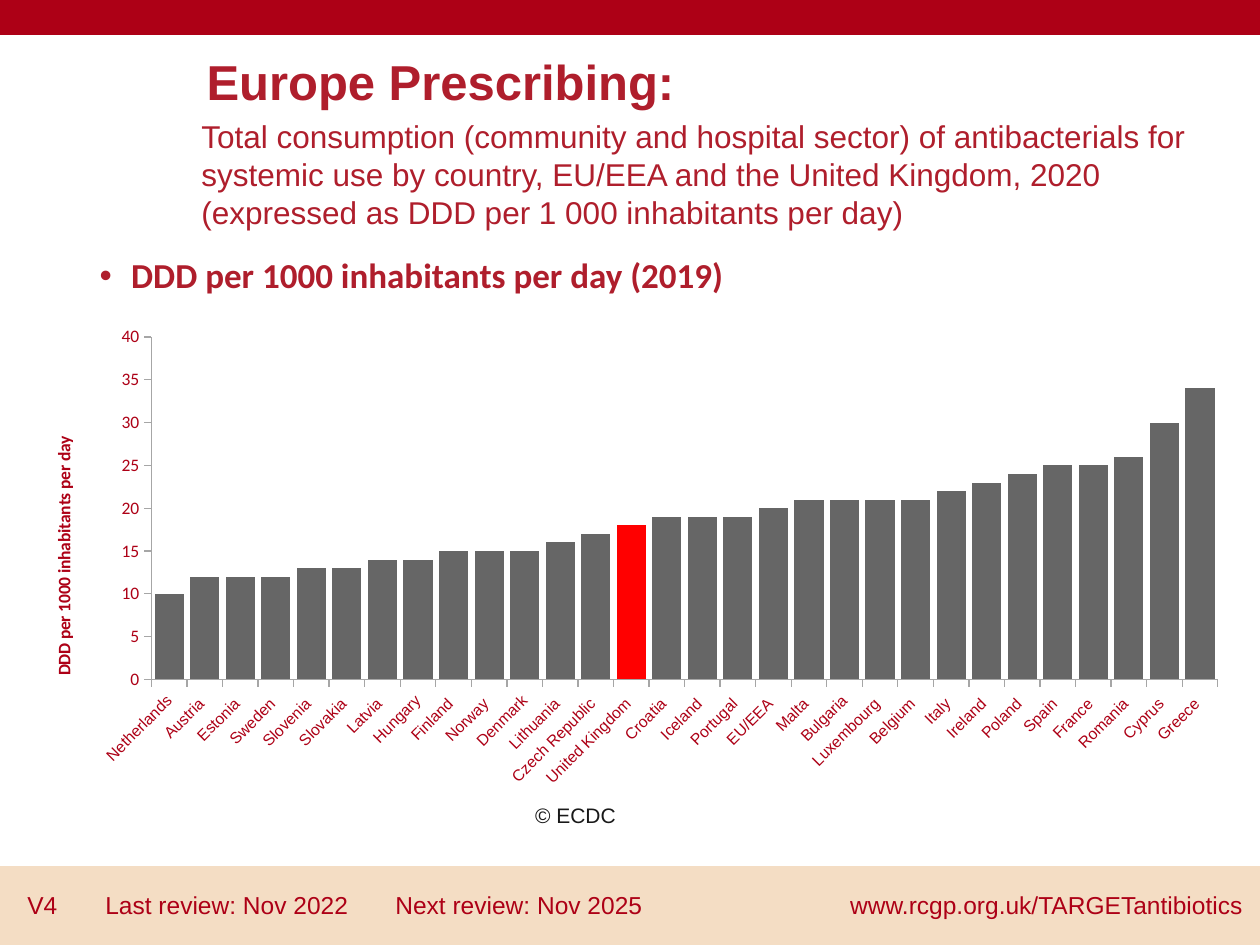
from lxml import etree
from pptx import Presentation
from pptx import util as u
from pptx.chart.data import CategoryChartData
from pptx.dml.color import RGBColor
from pptx.enum import chart as charts, shapes, text
from pptx.oxml import parse_xml
from pptx.oxml.ns import nsdecls, qn

RED, TITLE_RED, SAND, INK = "AD0016", "AF1E2C", "F4DDC4", "191919"
BAR_GREY, AXIS_GREY, HIGHLIGHT = "666666", "A6A6A6", "FF0000"
AXIS_TITLE = "DDD per 1000 inhabitants per day"
MARKED_COUNTRY = "United Kingdom "
CONSUMPTION = {
    "Netherlands": 10, "Austria ": 12, "Estonia ": 12, "Sweden ": 12,
    "Slovenia ": 13, "Slovakia ": 13, "Latvia ": 14, "Hungary": 14,
    "Finland ": 15, "Norway ": 15, "Denmark": 15, "Lithuania ": 16,
    "Czech Republic ": 17, MARKED_COUNTRY: 18, "Croatia ": 19,
    "Iceland ": 19, "Portugal ": 19, "EU/EEA ": 20, "Malta ": 21,
    "Bulgaria": 21, "Luxembourg ": 21, "Belgium ": 21, "Italy ": 22,
    "Ireland ": 23, "Poland ": 24, "Spain ": 25, "France ": 25,
    "Romania ": 26, "Cyprus ": 30, "Greece ": 34,
}


def px(length):
    return u.Emu(round(length * 914400 / 126))


def color(value):
    return RGBColor.from_string(value)


def style(font, size, hue, bold=False, name="Arial"):
    font.name, font.size, font.bold = name, u.Pt(size), bold
    font.color.rgb = color(hue)


def place(shape, box):
    shape.left, shape.top, shape.width, shape.height = map(px, box)


def add_band(page, box, hue):
    band = page.shapes.add_shape(shapes.MSO_SHAPE.RECTANGLE, *map(px, box))
    band.shadow.inherit = False
    band.fill.solid()
    band.fill.fore_color.rgb = color(hue)
    band.line.color.rgb = color(hue)
    band.line.width = u.Pt(1)


def add_label(page, box, words, size, hue, align=text.PP_ALIGN.LEFT,
              anchor=text.MSO_ANCHOR.TOP, tabs=()):
    frame = page.shapes.add_textbox(*map(px, box)).text_frame
    frame.word_wrap = True
    frame.vertical_anchor = anchor
    para = frame.paragraphs[0]
    para.text = words
    para.alignment = align
    if tabs:
        tab_list = etree.SubElement(para._p.get_or_add_pPr(), qn("a:tabLst"))
        for stop in tabs:
            etree.SubElement(tab_list, qn("a:tab"), pos=str(px(stop)), algn="l")
    style(para.runs[0].font, size, hue)


def fill_heading(page, box):
    left, top, width, height = box
    title = page.shapes.title
    place(title, (left + 5, top, width - 98, 42))
    frame = title.text_frame
    frame.text = "Europe Prescribing:"
    frame.auto_size = text.MSO_AUTO_SIZE.NONE
    frame.vertical_anchor = text.MSO_ANCHOR.MIDDLE
    para = frame.paragraphs[0]
    para.alignment = text.PP_ALIGN.LEFT
    para.line_spacing = 0.9
    style(para.runs[0].font, 28, TITLE_RED, bold=True)
    add_label(page, (left, top + 42, width, height - 42),
              "Total consumption (community and hospital sector) of antibacterials "
              "for systemic use by country, EU/EEA and the United Kingdom, 2020 "
              "(expressed as DDD per 1 000 inhabitants per day)",
              18, TITLE_RED, anchor=text.MSO_ANCHOR.BOTTOM)


def fill_body(page, box):
    body = page.placeholders[1]
    place(body, box)
    frame = body.text_frame
    frame.text = AXIS_TITLE + " (2019)"
    frame.auto_size = text.MSO_AUTO_SIZE.NONE
    para = frame.paragraphs[0]
    para.line_spacing = 0.9
    para.space_before = u.Pt(0)
    properties = para._p.get_or_add_pPr()
    properties.set("marL", str(u.Inches(0.25)))
    properties.set("indent", str(-u.Inches(0.25)))
    etree.SubElement(properties, qn("a:buFont"), typeface="Arial")
    etree.SubElement(properties, qn("a:buChar"), char="•")
    style(para.runs[0].font, 20, TITLE_RED, bold=True, name="Calibri")


def set_layout(parent, index, **values):
    """Give a chart part a manual position, as fractions of the chart."""
    for old in parent.findall(qn("c:layout")):
        parent.remove(old)
    settings = "".join(f'<c:{key} val="{value}"/>' for key, value in values.items())
    parent.insert(index, parse_xml(
        f'<c:layout {nsdecls("c")}><c:manualLayout>{settings}'
        "</c:manualLayout></c:layout>"))


def add_consumption_chart(page, box):
    data = CategoryChartData()
    data.categories = list(CONSUMPTION)
    data.add_series("Series 1", list(CONSUMPTION.values()))
    chart = page.shapes.add_chart(charts.XL_CHART_TYPE.COLUMN_CLUSTERED,
                                  *map(px, box), data).chart
    chart.has_legend = chart.has_title = False
    style(chart.font, 10, RED, name="Calibri")

    plot = chart.plots[0]
    plot.gap_width = 22
    plot.vary_by_categories = False
    series = plot.series[0]
    marked = series.points[list(CONSUMPTION).index(MARKED_COUNTRY)]
    for part, hue in ((series, BAR_GREY), (marked, HIGHLIGHT)):
        part.format.fill.solid()
        part.format.fill.fore_color.rgb = color(hue)

    countries, amounts = chart.category_axis, chart.value_axis
    for axis in (countries, amounts):
        axis.has_major_gridlines = False
        axis.major_tick_mark = charts.XL_TICK_MARK.OUTSIDE
        axis.format.line.color.rgb = color(AXIS_GREY)
    style(countries.tick_labels.font, 9, RED)
    countries._element.find(qn("c:txPr")).find(qn("a:bodyPr")).set("rot", "-2700000")
    style(amounts.tick_labels.font, 10, RED, name="Calibri")
    amounts.minimum_scale, amounts.maximum_scale, amounts.major_unit = 0, 40, 5
    amounts.tick_labels.number_format = "0"
    amounts.tick_labels.number_format_is_linked = False

    frame = amounts.axis_title.text_frame
    frame.text = AXIS_TITLE
    style(frame.paragraphs[0].runs[0].font, 10, RED, bold=True, name="Calibri")
    direction = frame._txBody.find(qn("a:bodyPr"))
    direction.set("rot", "-5400000")
    direction.set("vert", "horz")
    set_layout(amounts.axis_title._element, 1,
               xMode="edge", yMode="edge", x=0.02, y=0.24)
    set_layout(plot._element.getparent(), 0, layoutTarget="inner",
               xMode="edge", yMode="edge", x=0.104, y=0.04, w=0.877, h=0.715)


def add_footer(page, box):
    left, top, width, height = box
    add_band(page, box, SAND)
    add_label(page, (left + 15, top + 13, 645, 50),
              "V4\tLast review: Nov 2022\tNext review: Nov 2025", 14, RED,
              anchor=text.MSO_ANCHOR.MIDDLE, tabs=(78, 368))
    add_label(page, (left + width - 424, top + 17, 421, 43),
              "www.rcgp.org.uk/TARGETantibiotics", 14, RED, text.PP_ALIGN.CENTER)


def main():
    deck = Presentation()
    deck.slide_width, deck.slide_height = px(1260), px(945)
    page = deck.slides.add_slide(deck.slide_layouts[1])
    add_band(page, (0, -1, 1260, 35), RED)
    fill_heading(page, (189, 64, 1052, 173))
    fill_body(page, (87, 252, 1086, 600))
    add_consumption_chart(page, (25, 318, 1216, 479))
    add_label(page, (268, 796, 615, 38), "© ECDC", 12, INK, text.PP_ALIGN.CENTER)
    add_footer(page, (0, 867, 1260, 78))
    deck.save("out.pptx")


if __name__ == "__main__":
    main()
